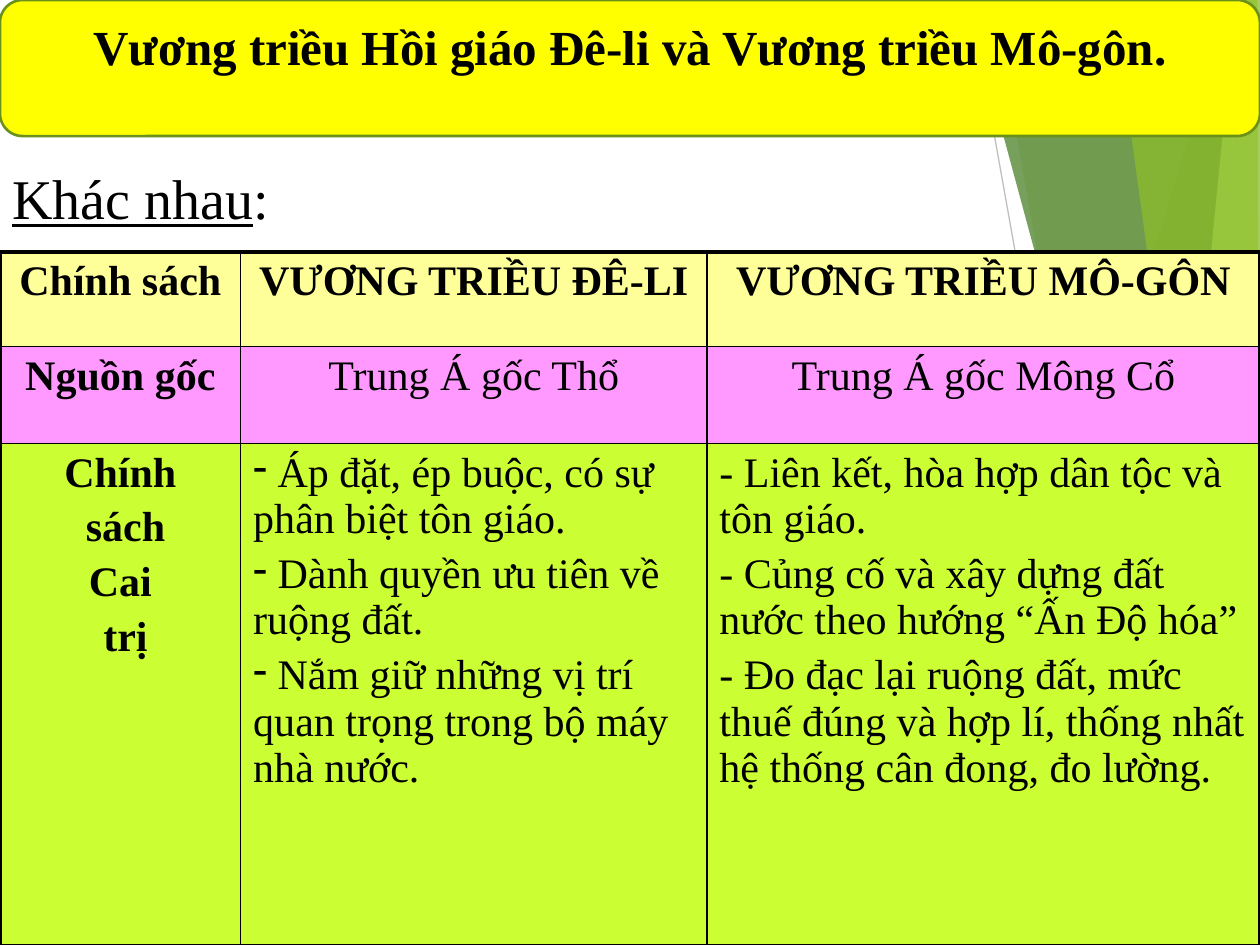
from lxml import etree
from pptx import Presentation
from pptx import util as u
from pptx.dml.color import RGBColor
from pptx.enum import shapes, text
from pptx.oxml import ns

PX = 9144
FONT = "Times New Roman"
BLACK = RGBColor(0, 0, 0)
BANNER_YELLOW = RGBColor(0xFF, 0xFF, 0x00)
BANNER_EDGE = RGBColor(0x6B, 0x90, 0x1C)
HEADER_CREAM = RGBColor(0xFF, 0xFF, 0x99)
ORIGIN_PINK = RGBColor(0xFF, 0x99, 0xFF)
POLICY_LIME = RGBColor(0xCC, 0xFF, 0x33)
LEAF = RGBColor(0x90, 0xC2, 0x26)
GREEN = RGBColor(0x54, 0xA0, 0x21)
FOREST = RGBColor(0x3F, 0x78, 0x19)
PALE_LEAF = RGBColor(0xC0, 0xE4, 0x74)
LIGHT_GREY = RGBColor(0xD9, 0xD9, 0xD9)
GREY = RGBColor(0xBF, 0xBF, 0xBF)

RAYS = [
    ((561, 750), (1001, 457), LIGHT_GREY),
    ((770, 0), (904, 750), GREY),
]
FACETS = [
    (LEAF, 85, [(-1, 439), (49, 751), (-1, 750)]),
    (LEAF, 30, [(975, 0), (754, 750), (1002, 751), (1001, 1)]),
    (LEAF, 20, [(788, -1), (919, 750), (1001, 750), (1001, -1)]),
    (GREEN, 72, [(726, 750), (1000, 429), (1001, 750)]),
    (FOREST, 70, [(767, -1), (970, 750), (1001, 749), (1001, -1)]),
    (PALE_LEAF, 70, [(981, -1), (907, 750), (1001, 750), (1000, -1)]),
    (LEAF, 65, [(883, -1), (986, 750), (1000, 750), (998, -1)]),
    (LEAF, 80, [(881, 750), (1001, 535), (1001, 749)]),
]

COLUMN_WIDTHS = [191, 370, 439]
ROW_HEIGHTS = [75, 77, 398]
ROW_FILLS = [HEADER_CREAM, ORIGIN_PINK, POLICY_LIME]
COMPARISON = [
    [["Chính sách"], ["VƯƠNG TRIỀU ĐÊ-LI"], ["VƯƠNG TRIỀU MÔ-GÔN"]],
    [["Nguồn gốc"], ["Trung Á gốc Thổ"], ["Trung Á gốc Mông Cổ"]],
    [
        ["Chính", " sách", "Cai", " trị"],
        [
            " Áp đặt, ép buộc, có sự phân biệt tôn giáo.",
            " Dành quyền ưu tiên về ruộng đất.",
            " Nắm giữ những vị trí quan trọng trong bộ máy nhà nước.",
        ],
        [
            "- Liên kết, hòa hợp dân tộc và tôn giáo.",
            "- Củng cố và xây dựng đất nước theo hướng “Ấn Độ hóa”",
            "- Đo đạc lại ruộng đất, mức thuế đúng và hợp lí, thống nhất hệ thống cân đong, đo lường.",
        ],
    ],
]


def px(*lengths):
    """Turn px lengths into EMU."""
    return [u.Emu(length * PX) for length in lengths]


def add_run(paragraph, wording, size, bold=False, underline=False):
    """Add one black run to a paragraph."""
    run = paragraph.add_run()
    run.text = wording
    run.font.name = FONT
    run.font.size = u.Pt(size)
    run.font.bold = bold
    run.font.underline = underline
    run.font.color.rgb = BLACK


def add_facets(slide, left, top):
    """Draw the thin rays and translucent facets behind the content."""
    for start, end, grey in RAYS:
        ray = slide.shapes.add_connector(
            shapes.MSO_CONNECTOR.STRAIGHT,
            *px(left + start[0], top + start[1], left + end[0], top + end[1]),
        )
        ray.line.color.rgb = grey
        ray.line.width = u.Pt(0.75)
        etree.SubElement(ray._element.spPr, ns.qn("a:effectLst"))
    for green, opacity, corners in FACETS:
        placed = [(left + x, top + y) for x, y in corners]
        outline = slide.shapes.build_freeform(*placed[0], scale=PX)
        outline.add_line_segments(placed[1:], close=True)
        facet = outline.convert_to_shape()
        facet.shadow.inherit = False
        facet.line.fill.background()
        facet.fill.solid()
        facet.fill.fore_color.rgb = green
        tint = facet._element.spPr.find(ns.qn("a:solidFill"))[0]
        etree.SubElement(tint, ns.qn("a:alpha"), val=str(opacity * 1000))


def add_heading(slide, left, top, width, height):
    """Write the underlined heading above the table."""
    heading = slide.shapes.add_textbox(*px(left, top, width, height))
    frame = heading.text_frame
    frame.word_wrap = True
    frame.vertical_anchor = text.MSO_ANCHOR.BOTTOM
    frame.margin_top = frame.margin_bottom = 0
    add_run(frame.paragraphs[0], "Khác nhau", 32, underline=True)
    add_run(frame.paragraphs[0], ":", 32)


def add_borders(cell, row, column):
    """Rule a cell in black, thicker on the left, top and right table edges."""
    thick = {"L": column == 0, "R": column == 2, "T": row == 0, "B": False}
    properties = cell._tc.get_or_add_tcPr()
    for position, (side, outer) in enumerate(thick.items()):
        width = u.Pt(2.25 if outer else 1)
        border = etree.Element(ns.qn(f"a:ln{side}"), w=str(int(width)))
        fill = etree.SubElement(border, ns.qn("a:solidFill"))
        etree.SubElement(fill, ns.qn("a:srgbClr"), val=str(BLACK))
        properties.insert(position, border)


def fill_cell(cell, row, column):
    """Write, colour and rule one cell of the comparison."""
    cell.fill.solid()
    cell.fill.fore_color.rgb = ROW_FILLS[row]
    add_borders(cell, row, column)
    frame = cell.text_frame
    for index, wording in enumerate(COMPARISON[row][column]):
        paragraph = frame.add_paragraph() if index else frame.paragraphs[0]
        centred = row < 2 or column == 0
        paragraph.alignment = text.PP_ALIGN.CENTER if centred else text.PP_ALIGN.LEFT
        paragraph.space_before = u.Pt(4.8)
        if (row, column) == (2, 1):
            properties = paragraph._p.get_or_add_pPr()
            properties.set("marL", "0")
            properties.set("indent", "0")
            etree.SubElement(properties, ns.qn("a:buFontTx"))
            etree.SubElement(properties, ns.qn("a:buChar"), char="-")
        add_run(paragraph, wording, 24, bold=row == 0 or column == 0)


def add_comparison(slide, left, top, width, height):
    """Build the table that compares the two dynasties."""
    table = slide.shapes.add_table(3, 3, *px(left, top, width, height)).table
    table.first_row = table.horz_banding = False
    for column, column_width in zip(table.columns, px(*COLUMN_WIDTHS)):
        column.width = column_width
    for row, row_height in zip(table.rows, px(*ROW_HEIGHTS)):
        row.height = row_height
    for row in range(3):
        for column in range(3):
            fill_cell(table.cell(row, column), row, column)


def add_banner(slide, left, top, width, height):
    """Draw the yellow title banner."""
    banner = slide.shapes.add_shape(
        shapes.MSO_SHAPE.ROUNDED_RECTANGLE, *px(left, top, width, height)
    )
    banner.shadow.inherit = False
    banner.fill.solid()
    banner.fill.fore_color.rgb = BANNER_YELLOW
    banner.line.color.rgb = BANNER_EDGE
    banner.line.width = u.Pt(1.5)
    frame = banner.text_frame
    frame.word_wrap = True
    frame.vertical_anchor = text.MSO_ANCHOR.TOP
    frame.margin_top = px(8)[0]
    title = frame.paragraphs[0]
    title.alignment = text.PP_ALIGN.CENTER
    add_run(title, "Vương triều Hồi giáo Đê-li và Vương triều Mô-gôn.", 28, bold=True)


def main():
    """Build and save the slide."""
    deck = Presentation()
    deck.slide_width, deck.slide_height = px(1000, 750)
    slide = deck.slides.add_slide(deck.slide_layouts[6])
    add_facets(slide, 0, 0)
    add_heading(slide, 0, 125, 1000, 58)
    add_comparison(slide, 0, 200, 1000, 550)
    add_banner(slide, 0, 0, 1000, 108)
    deck.save("out.pptx")


if __name__ == "__main__":
    main()
